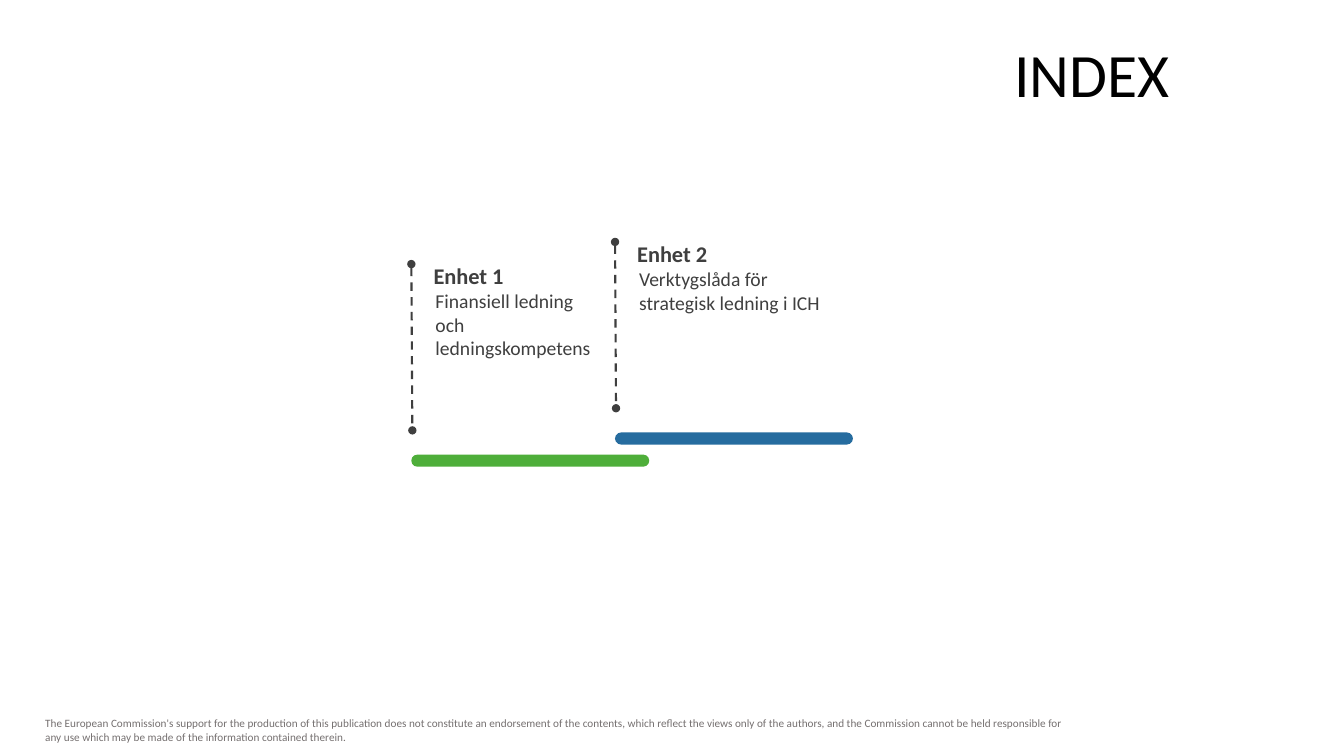
from lxml import etree
from pptx import Presentation
from pptx import util as u
from pptx.dml.color import RGBColor
from pptx.enum import dml, shapes, text
from pptx.oxml.ns import qn

FONT = "Calibri"
DARK = "3F3F3F"
DISCLAIMER = (
    "The European Commission's support for the production of this publication does not "
    "constitute an endorsement of the contents, which reflect the views only of the authors, "
    "and the Commission cannot be held responsible for any use which may be made of the "
    "information contained therein."
)
# heading, description, description width, bar colour
UNITS = [
    ("Enhet 1", "Finansiell ledning och ledningskompetens", 1.89, "4EAE3A"),
    ("Enhet 2", "Verktygslåda för strategisk ledning i ICH", 2.22, "266C9F"),
]
LEFT, TOP = 4.08, 2.62          # start of the first unit
STEP_X, STEP_Y = 2.02, -0.22    # each unit sits right of and above the last
BAR_W, BAR_H = 2.36, 0.12


def colour(value):
    return RGBColor.from_string(value)


def box(*lengths):
    return [u.Inches(n) for n in lengths]


def style(tf, size, value, bold=False):
    for p in tf.paragraphs:
        for r in p.runs:
            r.font.name = FONT
            r.font.size = u.Pt(size)
            r.font.bold = bold
            r.font.color.rgb = colour(value)


def add_text(s, content, at, size, value=DARK, bold=False, inset=0.1):
    tf = s.shapes.add_textbox(*box(*at)).text_frame
    tf.word_wrap = True
    tf.margin_left = tf.margin_right = u.Inches(inset)
    tf.text = content
    style(tf, size, value, bold)


def add_title(s, content):
    title = s.shapes.title
    title.left, title.top, title.width, title.height = box(3.09, 0.37, 8.61, 0.79)
    tf = title.text_frame
    tf.text = content
    tf.auto_size = text.MSO_AUTO_SIZE.NONE
    tf.vertical_anchor = text.MSO_ANCHOR.MIDDLE
    p = tf.paragraphs[0]
    p.alignment = text.PP_ALIGN.RIGHT
    p.line_spacing = 0.9
    style(tf, 44, "000000")


def add_bar(s, x, y, value):
    bar = s.shapes.add_shape(shapes.MSO_SHAPE.ROUNDED_RECTANGLE, *box(x, y, BAR_W, BAR_H))
    bar.adjustments[0] = 0.5
    bar.shadow.inherit = False
    bar.fill.solid()
    bar.fill.fore_color.rgb = colour(value)
    bar.line.fill.background()


def add_pin(s, x, y):
    """Dashed line with a dot at each end."""
    pin = s.shapes.add_connector(
        shapes.MSO_CONNECTOR.STRAIGHT, *box(x, y, x + 0.01, y + 1.65))
    pin.line.color.rgb = colour(DARK)
    pin.line.width = u.Pt(1.5)
    pin.line.dash_style = dml.MSO_LINE.DASH
    ln = pin.line._get_or_add_ln()
    for end in ("a:headEnd", "a:tailEnd"):
        etree.SubElement(ln, qn(end), type="oval")
    etree.SubElement(pin._element.spPr, qn("a:effectLst"))


def add_unit(s, index, heading, description, width, value):
    x, y = LEFT + index * STEP_X, TOP + index * STEP_Y
    add_bar(s, x, y + 1.89, value)
    add_text(s, description, (x + 0.14, y + 0.2, width, 0.57), 14)
    add_text(s, heading, (x + 0.1, y - 0.07, 1.9, 0.37), 16, bold=True, inset=0.12)
    add_pin(s, x, y)


def main():
    prs = Presentation()
    prs.slide_width, prs.slide_height = box(13.33, 7.5)
    s = prs.slides.add_slide(prs.slide_layouts[5])
    add_title(s, "INDEX")
    add_text(s, DISCLAIMER, (0.35, 7.06, 10.46, 0.37), 8, "757070")
    for index, unit in enumerate(UNITS):
        add_unit(s, index, *unit)
    prs.save("out.pptx")


if __name__ == "__main__":
    main()
